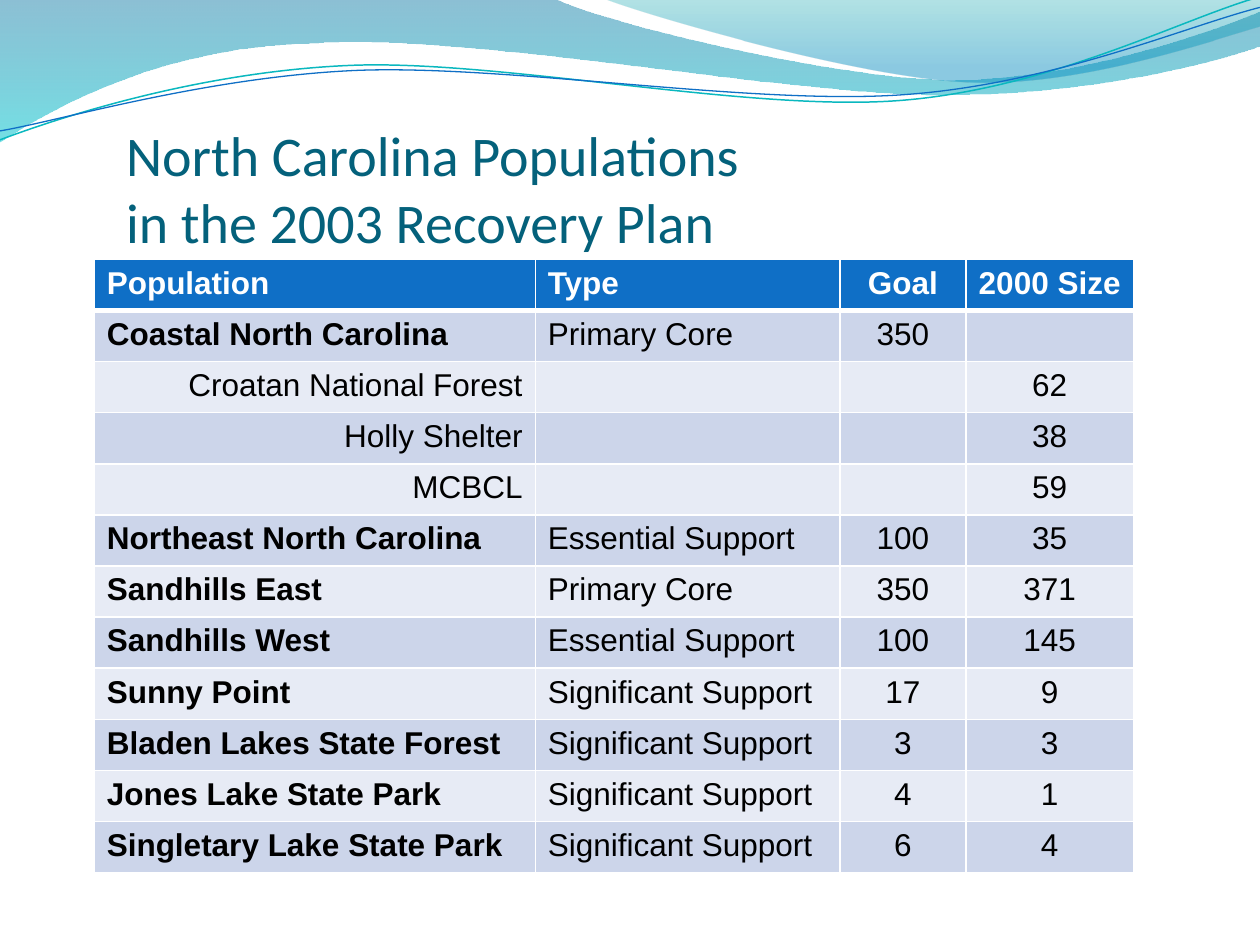
from dataclasses import dataclass

import lxml.etree
import pptx
import pptx.dml.color
import pptx.enum.text
import pptx.oxml.ns
import pptx.util

Cm = pptx.util.Cm
Pt = pptx.util.Pt
Align = pptx.enum.text.PP_ALIGN
qn = pptx.oxml.ns.qn

COLORS = {
    "title": "04617B",
    "header": "0F6FC6",
    "band_dark": "CCD5EA",
    "band_light": "E7EBF5",
    "white": "FFFFFF",
    "black": "000000",
    "deep_blue": "0074A1",
    "aqua": "00C6CF",
    "teal": "00A1A9",
    "sky": "008BBF",
    "teal_line": "0AB8BF",
}


@dataclass
class Stop:
    position: float
    color: str
    opacity: int


@dataclass
class Outline:
    start: tuple
    segments: list


@dataclass
class Wave:
    outline: Outline
    stops: tuple


@dataclass
class Ribbon:
    outline: Outline
    color: str
    width: float


@dataclass
class Population:
    name: str
    kind: str
    goal: str
    size: str
    is_part: bool = False


WAVES = [
    Wave(Outline((0, 0), [
        ((11.18, -0.03),),
        ((12.09, 0.43), (16.87, 1.6), (19.25, 1.6)),
        ((21.67, 1.6), (24.33, 0.66), (25.4, 0.23)),
        ((25.43, 0.91),),
        ((24.97, 1.12), (22.1, 1.93), (18.95, 1.91)),
        ((15.8, 1.91), (9.7, 0.71), (6.53, 0.86)),
        ((3.28, 0.91), (1.17, 2.11), (-0.03, 2.87)),
        ((0, 0),),
    ]), (Stop(0, "deep_blue", 45), Stop(1, "aqua", 55))),
    Wave(Outline((12.17, -0.03), [
        ((12.93, 0.28), (17.32, 1.57), (19.53, 1.65)),
        ((21.74, 1.75), (24.41, 0.81), (25.4, 0.53)),
        ((25.4, 0),),
        ((12.17, -0.03),),
    ]), (Stop(0, "teal", 30), Stop(0.8, "sky", 45))),
]
RIBBONS = [
    Ribbon(Outline((0, 2.82), [
        ((1.22, 2.36), (4.01, 1.45), (7.04, 1.32)),
        ((10.03, 1.19), (15.06, 2.26), (18.11, 2.03)),
        ((21.16, 1.8), (23.83, 0.38), (25.35, -0.05)),
    ]), "teal_line", 0.85),
    Ribbon(Outline((0, 2.64), [
        ((1.19, 2.44), (4.17, 1.55), (7.19, 1.42)),
        ((10.24, 1.3), (15.16, 2.13), (18.21, 1.91)),
        ((21.23, 1.7), (23.9, 0.53), (25.4, 0.15)),
    ]), "header", 0.75),
]
HEADER = Population("Population", "Type", "Goal", "2000 Size")
POPULATIONS = [
    Population("Coastal North Carolina", "Primary Core", "350", ""),
    Population("Croatan National Forest", "", "", "62", True),
    Population("Holly Shelter", "", "", "38", True),
    Population("MCBCL", "", "", "59", True),
    Population("Northeast North Carolina", "Essential Support", "100", "35"),
    Population("Sandhills East", "Primary Core", "350", "371"),
    Population("Sandhills West", "Essential Support", "100", "145"),
    Population("Sunny Point", "Significant Support", "17", "9"),
    Population("Bladen Lakes State Forest", "Significant Support", "3", "3"),
    Population("Jones Lake State Park", "Significant Support", "4", "1"),
    Population("Singletary Lake State Park", "Significant Support", "6", "4"),
]
COLUMN_WIDTHS = [8.89, 6.14, 2.54, 3.38]
ROW_HEIGHT = 1.03


def rgb(name: str) -> pptx.dml.color.RGBColor:
    return pptx.dml.color.RGBColor.from_string(COLORS[name])


def add_outline(page, outline: Outline, closed: bool):
    start_x, start_y = outline.start
    builder = page.shapes.build_freeform(Cm(start_x), Cm(start_y))
    ends = [(Cm(x), Cm(y)) for *_, (x, y) in outline.segments]
    builder.add_line_segments(ends, close=closed)
    shape = builder.convert_to_shape()
    shape.shadow.inherit = False
    lines = list(shape._element.spPr.iter(qn("a:lnTo")))
    for line, segment in zip(lines, outline.segments):
        if len(segment) == 3:
            bend_line(line, segment, shape.left, shape.top)
    return shape


def bend_line(line, segment: tuple, left: int, top: int) -> None:
    curve = lxml.etree.Element(qn("a:cubicBezTo"))
    for x, y in segment:
        lxml.etree.SubElement(curve, qn("a:pt"), x=str(Cm(x) - left), y=str(Cm(y) - top))
    line.getparent().replace(line, curve)


def move_to_master(shape, master) -> None:
    tree = master.shapes._spTree
    shape._element.nvSpPr.cNvPr.set("id", str(100 + len(tree)))
    tree.append(shape._element)


def add_wave(page, master, wave: Wave) -> None:
    shape = add_outline(page, wave.outline, True)
    shape.line.fill.background()
    shape.fill.gradient()
    shape.fill.gradient_angle = 270
    for target, stop in zip(shape.fill.gradient_stops, wave.stops):
        target.position = stop.position
        target.color.rgb = rgb(stop.color)
    colors = shape._element.spPr.iter(qn("a:srgbClr"))
    for color, stop in zip(colors, wave.stops):
        lxml.etree.SubElement(color, qn("a:alpha"), val=str(stop.opacity * 1000))
    move_to_master(shape, master)


def add_ribbon(page, master, ribbon: Ribbon) -> None:
    shape = add_outline(page, ribbon.outline, False)
    shape.fill.background()
    shape.line.color.rgb = rgb(ribbon.color)
    shape.line.width = Pt(ribbon.width)
    move_to_master(shape, master)


def format_title(title) -> None:
    title.left, title.top, title.width, title.height = Cm(2.54), Cm(1.96), Cm(13.13), Cm(3.18)
    frame = title.text_frame
    frame.text = "North Carolina Populations in the 2003 Recovery Plan"
    frame.word_wrap = True
    frame.auto_size = pptx.enum.text.MSO_AUTO_SIZE.NONE
    frame.vertical_anchor = pptx.enum.text.MSO_ANCHOR.BOTTOM
    frame.margin_left = frame.margin_right = frame.margin_bottom = 0
    frame.margin_top = Cm(0.13)
    para = frame.paragraphs[0]
    para.alignment = Align.LEFT
    font = para.runs[0].font
    font.name, font.size, font.color.rgb = "Calibri", Pt(32), rgb("title")


def set_borders(cell, bottom_width: float) -> None:
    properties = cell._tc.get_or_add_tcPr()
    for side, width in (("L", 1), ("R", 1), ("T", 1), ("B", bottom_width)):
        line = lxml.etree.SubElement(properties, qn(f"a:ln{side}"), w=str(Pt(width)))
        fill = lxml.etree.SubElement(line, qn("a:solidFill"))
        lxml.etree.SubElement(fill, qn("a:srgbClr"), val=COLORS["white"])


def fill_cell(cell, text: str, fill: str, color: str, bold: bool, align, bottom: float) -> None:
    set_borders(cell, bottom)
    cell.fill.solid()
    cell.fill.fore_color.rgb = rgb(fill)
    cell.text_frame.text = text
    para = cell.text_frame.paragraphs[0]
    para.alignment = align
    for span in para.runs:
        span.font.name, span.font.size, span.font.bold = "Arial", Pt(18), bold
        span.font.color.rgb = rgb(color)


def add_population_table(page) -> None:
    rows = [HEADER, *POPULATIONS]
    table = page.shapes.add_table(
        len(rows), len(COLUMN_WIDTHS), Cm(1.9), Cm(5.23),
        Cm(sum(COLUMN_WIDTHS)), Cm(ROW_HEIGHT * len(rows)),
    ).table
    for column, width in zip(table.columns, COLUMN_WIDTHS):
        column.width = Cm(width)
    for index, entry in enumerate(rows):
        table.rows[index].height = Cm(ROW_HEIGHT)
        is_header = index == 0
        band = "band_dark" if index % 2 else "band_light"
        name_align = Align.RIGHT if entry.is_part else Align.LEFT
        aligns = (name_align, Align.LEFT, Align.CENTER, Align.CENTER)
        texts = (entry.name, entry.kind, entry.goal, entry.size)
        for column, (text, align) in enumerate(zip(texts, aligns)):
            fill_cell(
                table.cell(index, column), text,
                "header" if is_header else band,
                "white" if is_header else "black",
                is_header or (column == 0 and not entry.is_part),
                align, 3 if is_header else 1,
            )


def main() -> None:
    deck = pptx.Presentation()
    deck.slide_width, deck.slide_height = Cm(25.4), Cm(19.05)
    page = deck.slides.add_slide(deck.slide_layouts[5])
    for wave in WAVES:
        add_wave(page, deck.slide_master, wave)
    for ribbon in RIBBONS:
        add_ribbon(page, deck.slide_master, ribbon)
    format_title(page.shapes.title)
    add_population_table(page)
    deck.save("out.pptx")


if __name__ == "__main__":
    main()
